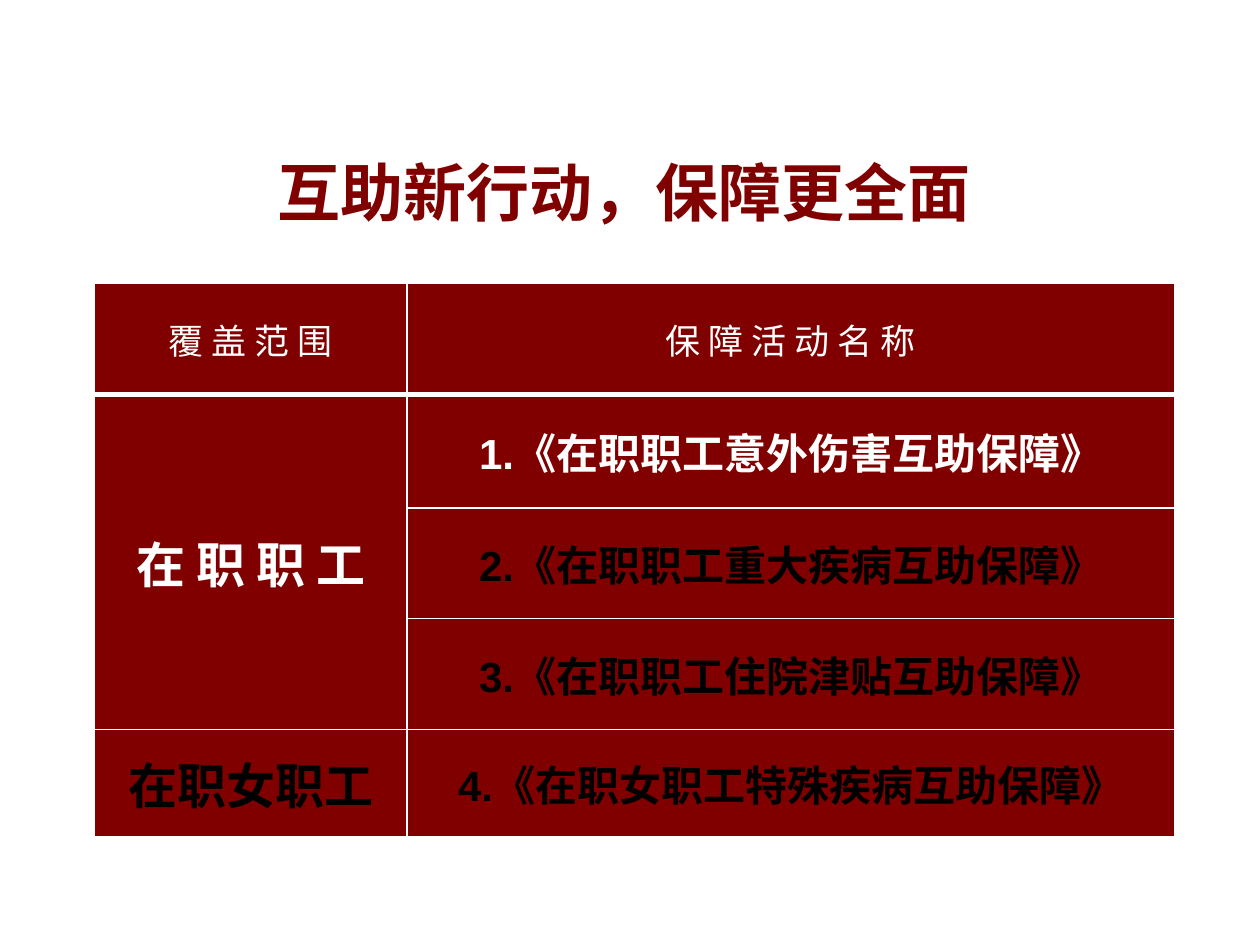
from lxml.etree import SubElement
from pptx import Presentation
from pptx.dml.color import RGBColor
from pptx.enum.text import MSO_ANCHOR, PP_ALIGN
from pptx.oxml.ns import qn
from pptx.util import Inches, Pt

MAROON = RGBColor(0x80, 0x00, 0x00)
WHITE = RGBColor(0xFF, 0xFF, 0xFF)
BLACK = RGBColor(0x00, 0x00, 0x00)
LATIN, HAN = "Arial", "Noto Sans CJK SC"

HEADING = "互助新行动，保障更全面"
HEADERS = ["覆 盖 范 围", "保 障 活 动 名 称"]
# Covered group, its colour, and its plans with their colours
COVERAGE = [
    ("在 职 职 工", WHITE, [
        ("1.《在职职工意外伤害互助保障》", WHITE),
        ("2.《在职职工重大疾病互助保障》", BLACK),
        ("3.《在职职工住院津贴互助保障》", BLACK),
    ]),
    ("在职女职工", BLACK, [("4.《在职女职工特殊疾病互助保障》", BLACK)]),
]
COLUMN_WIDTHS = [2.48, 6.09]
ROW_HEIGHTS = [0.88, 0.9, 0.88, 0.88, 0.85]
HEADER_STYLE = {"size": Pt(20), "bold": False, "name": LATIN}
GROUP_STYLE = {"size": Pt(28), "bold": True, "name": LATIN}
PLAN_STYLE = {"size": Pt(24), "bold": True, "name": LATIN}
HEADING_STYLE = {"size": Pt(36), "bold": True, "name": HAN}


def write(frame, text, style, color):
    paragraph = frame.paragraphs[0]
    paragraph.alignment = PP_ALIGN.CENTER
    run = paragraph.add_run()
    run.text = text
    for attribute, value in style.items():
        setattr(run.font, attribute, value)
    run.font.color.rgb = color
    SubElement(run.font._element, qn("a:ea"), typeface=HAN)
    return paragraph


def format_cell(cell, bottom_width):
    """Give a cell white borders and a maroon fill; borders must come first."""
    properties = cell._tc.get_or_add_tcPr()
    for side in ("L", "R", "T", "B"):
        width = Pt(bottom_width if side == "B" else 1)
        border = SubElement(properties, qn(f"a:ln{side}"), w=str(width))
        fill = SubElement(border, qn("a:solidFill"))
        SubElement(fill, qn("a:srgbClr"), val=str(WHITE))
    cell.fill.solid()
    cell.fill.fore_color.rgb = MAROON
    cell.vertical_anchor = MSO_ANCHOR.MIDDLE


def add_heading(slide):
    box = slide.shapes.add_textbox(Inches(0.67), Inches(1.07), Inches(8.56), Inches(0.78))
    box.text_frame.word_wrap = True
    box.text_frame.vertical_anchor = MSO_ANCHOR.MIDDLE
    write(box.text_frame, HEADING, HEADING_STYLE, MAROON).line_spacing = 1.2


def add_coverage_table(slide):
    table = slide.shapes.add_table(
        len(ROW_HEIGHTS), len(COLUMN_WIDTHS), Inches(0.75), Inches(2.25),
        Inches(sum(COLUMN_WIDTHS)), Inches(sum(ROW_HEIGHTS))).table
    for column, width in zip(table.columns, COLUMN_WIDTHS):
        column.width = Inches(width)
    for index, (row, height) in enumerate(zip(table.rows, ROW_HEIGHTS)):
        row.height = Inches(height)
        for cell in row.cells:
            format_cell(cell, 3 if index == 0 else 1)

    for column, header in enumerate(HEADERS):
        write(table.cell(0, column).text_frame, header, HEADER_STYLE, WHITE)
    first = 1
    for group, group_color, plans in COVERAGE:
        group_cell = table.cell(first, 0)
        if len(plans) > 1:
            group_cell.merge(table.cell(first + len(plans) - 1, 0))
        write(group_cell.text_frame, group, GROUP_STYLE, group_color)
        for row, (plan, plan_color) in enumerate(plans, first):
            write(table.cell(row, 1).text_frame, plan, PLAN_STYLE, plan_color)
        first += len(plans)


def main():
    deck = Presentation()
    deck.slide_width, deck.slide_height = Inches(10), Inches(7.5)
    slide = deck.slides.add_slide(deck.slide_layouts[6])
    add_heading(slide)
    add_coverage_table(slide)
    deck.save("out.pptx")


if __name__ == "__main__":
    main()
